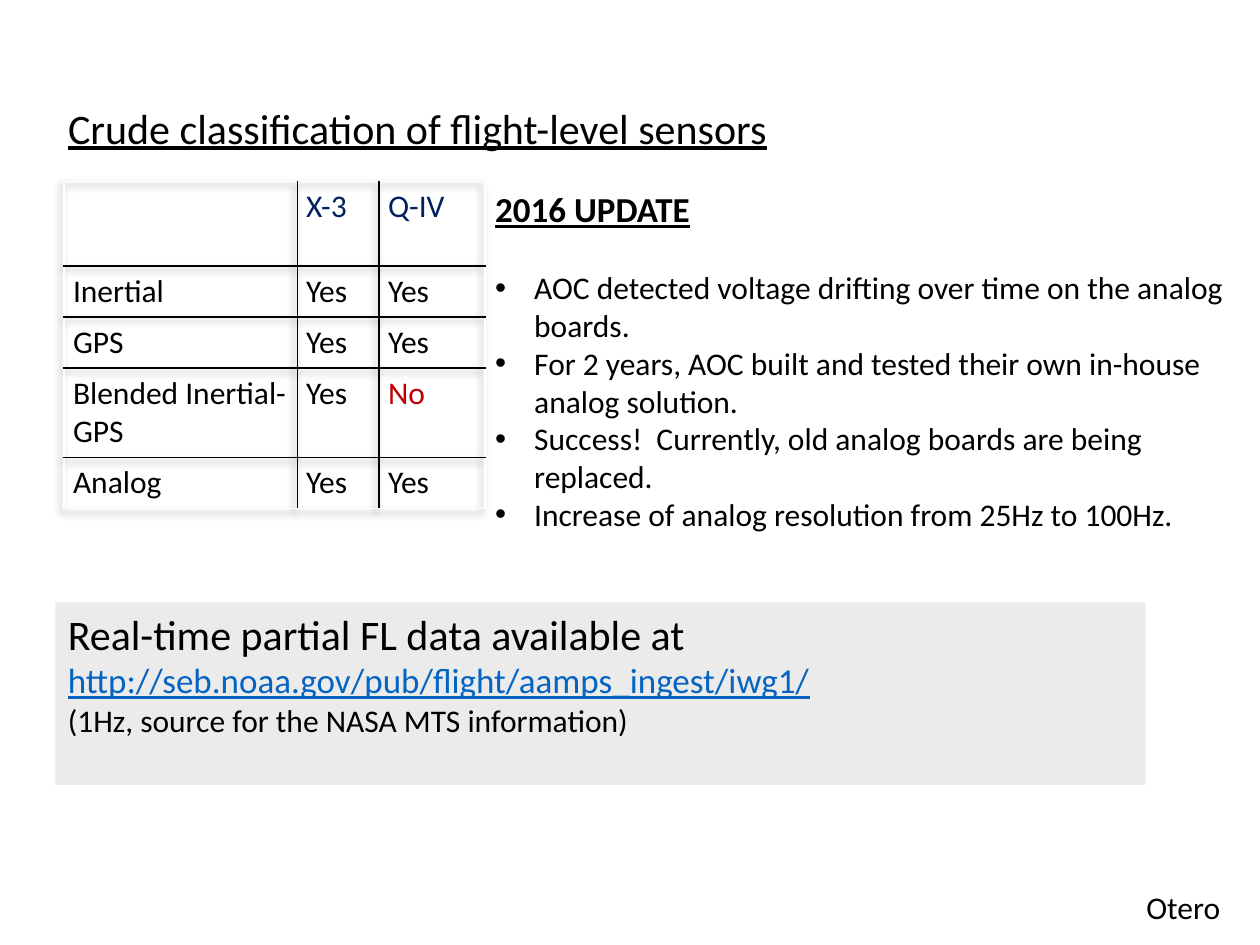
from pptx import Presentation
from pptx.dml.color import RGBColor
from pptx.enum import shapes, text
from pptx.oxml import parse_xml
from pptx.oxml.ns import nsdecls
from pptx.util import Inches, Pt

BLACK = RGBColor(0, 0, 0)
WHITE = RGBColor(255, 255, 255)
NAVY = RGBColor(0x00, 0x20, 0x60)
RED = RGBColor(0xC0, 0x00, 0x00)
LINK = RGBColor(0x05, 0x63, 0xC1)
GRAY = RGBColor(0xE7, 0xE6, 0xE6)
FONT = "Calibri"

# Content
TITLE = "Crude classification of flight-level sensors"
SENSORS = [
    ("", "X-3", "Q-IV"),
    ("Inertial", "Yes", "Yes"),
    ("GPS", "Yes", "Yes"),
    ("Blended Inertial-GPS", "Yes", "No"),
    ("Analog", "Yes", "Yes"),
]
COL_WIDTHS = [1.85, 0.65, 0.84]
ROW_HEIGHTS = [0.67, 0.4, 0.4, 0.7, 0.4]
UPDATE_HEADING = "2016 UPDATE"
UPDATES = [
    "AOC detected voltage drifting over time on the analog boards.",
    "For 2 years, AOC built and tested their own in-house analog solution.",
    "Success!  Currently, old analog boards are being replaced.",
    "Increase of analog resolution from 25Hz to 100Hz.",
]
DATA_LEAD = "Real-time partial FL data available at "
DATA_URL = "http://seb.noaa.gov/pub/flight/aamps_ingest/iwg1/"
DATA_NOTE = "(1Hz, source for the NASA MTS information)"
AUTHOR = "Otero"


def place(shape, left, top, width, height):
    shape.left, shape.top = Inches(left), Inches(top)
    shape.width, shape.height = Inches(width), Inches(height)


def set_frame(tf, wrap=True):
    tf.word_wrap = wrap
    tf.auto_size = text.MSO_AUTO_SIZE.NONE
    tf.vertical_anchor = text.MSO_ANCHOR.TOP


def add_run(p, words, size=18, color=BLACK, bold=False, underline=False):
    p.alignment = text.PP_ALIGN.LEFT
    r = p.add_run()
    r.text = words
    r.font.name, r.font.size = FONT, Pt(size)
    r.font.bold, r.font.underline = bold, underline
    r.font.color.rgb = color


def set_bullet(p, char=None, indent=0):
    pPr = p._p.get_or_add_pPr()
    pPr.set("marL", str(Inches(indent)))
    pPr.set("indent", str(-Inches(indent)))
    if char:
        pPr.append(parse_xml(f'<a:buFont {nsdecls("a")} typeface="Arial"/>'))
        pPr.append(parse_xml(f'<a:buChar {nsdecls("a")} char="{char}"/>'))
    else:
        pPr.append(parse_xml(f'<a:buNone {nsdecls("a")}/>'))


def set_borders(cell, sides):
    tcPr = cell._tc.get_or_add_tcPr()
    for i, (side, color) in enumerate(sides.items()):
        tcPr.insert(i, parse_xml(
            f'<a:ln{side} {nsdecls("a")} w="{Pt(1)}"><a:solidFill>'
            f'<a:srgbClr val="{color}"/></a:solidFill></a:ln{side}>'))


prs = Presentation()
prs.slide_width, prs.slide_height = Inches(10), Inches(7.5)
s = prs.slides.add_slide(prs.slide_layouts[1])

# Title
title = s.shapes.title
place(title, 0.44, 0.76, 5.82, 0.5)
set_frame(title.text_frame, wrap=False)
add_run(title.text_frame.paragraphs[0], TITLE, 24, underline=True)

# Sensor table: black inner lines, white outer edge, soft shadow
n_rows, n_cols = len(SENSORS), len(COL_WIDTHS)
frame = s.shapes.add_table(n_rows, n_cols, Inches(0.51), Inches(1.44),
                           Inches(sum(COL_WIDTHS)), Inches(sum(ROW_HEIGHTS)))
table = frame.table
table.first_row = table.horz_banding = False
table._tbl.tblPr.insert(0, parse_xml(
    f'<a:effectLst {nsdecls("a")}><a:outerShdw blurRad="50800" dist="38100" '
    'dir="8100000" algn="tr" rotWithShape="0"><a:srgbClr val="000000">'
    '<a:alpha val="40000"/></a:srgbClr></a:outerShdw></a:effectLst>'))
for column, width in zip(table.columns, COL_WIDTHS):
    column.width = Inches(width)
for row, height in zip(table.rows, ROW_HEIGHTS):
    row.height = Inches(height)
for i, values in enumerate(SENSORS):
    for j, value in enumerate(values):
        cell = table.cell(i, j)
        cell.fill.background()
        cell.margin_left = cell.margin_right = Inches(0.07)
        cell.margin_top = cell.margin_bottom = Inches(0.05)
        set_borders(cell, {
            "L": WHITE if j == 0 else BLACK,
            "R": WHITE if j == n_cols - 1 else BLACK,
            "T": WHITE if i == 0 else BLACK,
            "B": WHITE if i == n_rows - 1 else BLACK,
        })
        if value:
            color = NAVY if i == 0 else RED if value == "No" else BLACK
            add_run(cell.text_frame.paragraphs[0], value, color=color)

# Update list
body = s.placeholders[1]
place(body, 3.83, 1.44, 6.08, 2.86)
tf = body.text_frame
set_frame(tf)
p = tf.paragraphs[0]
p.space_before, p.space_after = Pt(0), Pt(22)
set_bullet(p)
add_run(p, UPDATE_HEADING, 20, bold=True, underline=True)
for item in UPDATES:
    p = tf.add_paragraph()
    p.space_before = Pt(0)
    set_bullet(p, "•", 0.31)
    add_run(p, item)

# Data access panel
panel = s.shapes.add_shape(shapes.MSO_SHAPE.RECTANGLE, Inches(0.44),
                           Inches(4.78), Inches(8.65), Inches(1.45))
panel.shadow.inherit = False
panel.line.fill.background()
panel.fill.solid()
panel.fill.fore_color.rgb = GRAY
panel.fill._xPr.solidFill[0].append(
    parse_xml(f'<a:alpha {nsdecls("a")} val="80000"/>'))
tf = panel.text_frame
set_frame(tf)
p = tf.paragraphs[0]
add_run(p, DATA_LEAD, 24)
add_run(p, DATA_URL, 20, LINK, underline=True)
add_run(tf.add_paragraph(), DATA_NOTE)

# Author
author = s.shapes.add_textbox(Inches(9), Inches(7), Inches(0.79), Inches(0.4))
set_frame(author.text_frame, wrap=False)
add_run(author.text_frame.paragraphs[0], AUTHOR)

prs.save("out.pptx")
